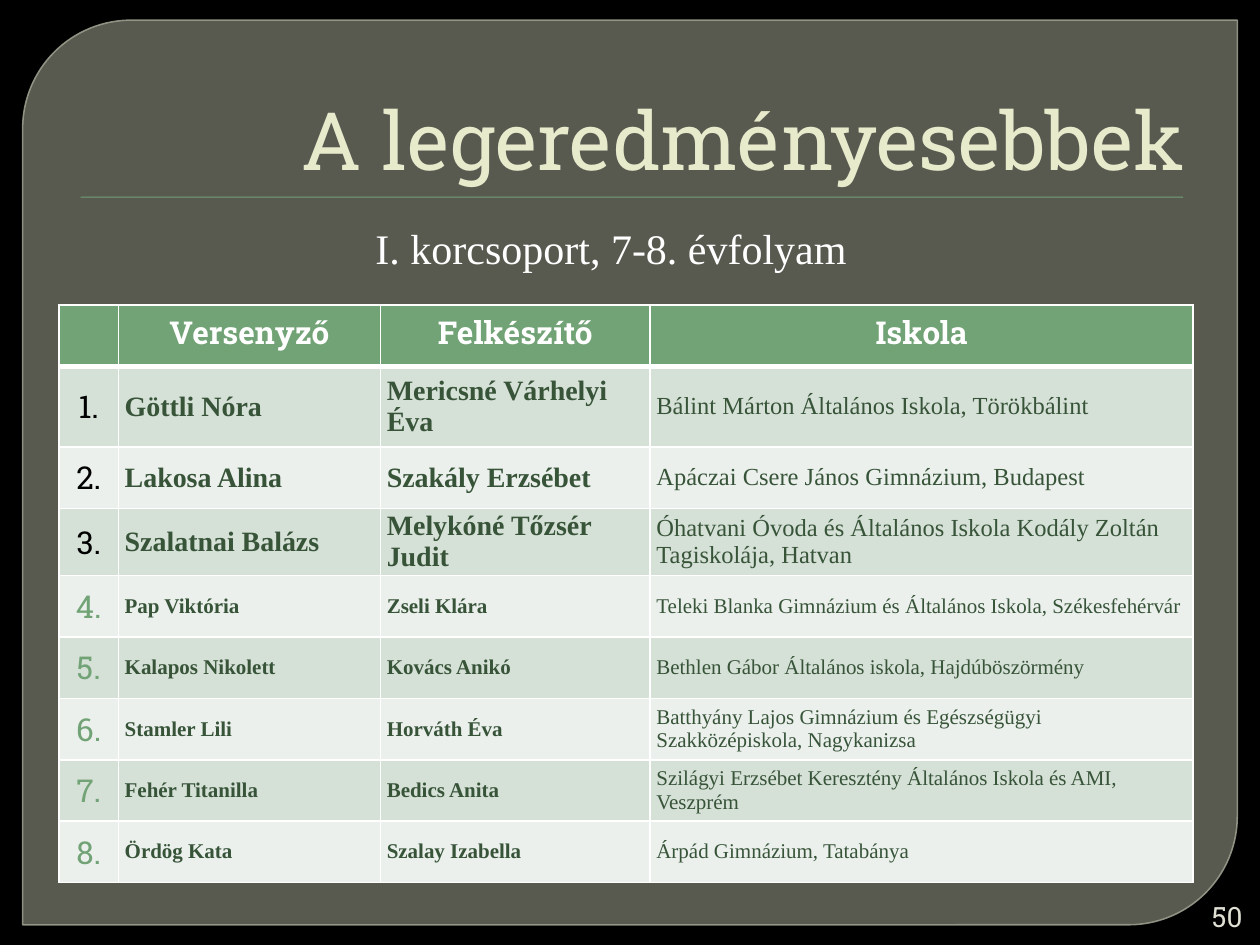
from dataclasses import dataclass

from lxml import etree
from pptx import Presentation, util as u
from pptx.dml import color
from pptx.enum import shapes, text
from pptx.oxml import ns

WIDTH, HEIGHT = u.Inches(10), u.Inches(7.5)
COLORS = {
    "background": "000000", "panel": "888B7B", "outline": "9DA090",
    "green": "72A376", "title": "E7EACB", "white": "FFFFFF", "black": "000000",
    "dark": "375439", "odd": "D5E0D6", "even": "EBF0EC", "number": "E0E0D4",
}
SLAB, SERIF = "Roboto Slab", "Times New Roman"
LEFT, CENTER, RIGHT = text.PP_ALIGN.LEFT, text.PP_ALIGN.CENTER, text.PP_ALIGN.RIGHT
MIDDLE = text.MSO_ANCHOR.MIDDLE
HEADINGS = ("", "Versenyző", "Felkészítő", "Iskola")
COLUMN_SHARES = (4.7, 20.8, 21.4, 43.1)
ROW_SHARE, FIRST_RESULT_SHARE = 6.5, 8.53
PODIUM = 3


@dataclass(frozen=True)
class Box:
    """Place on the slide in percent of its width and height."""
    left: float
    top: float
    width: float
    height: float

    def lengths(self) -> tuple:
        """Return left, top, width and height in slide units."""
        return (across(self.left), down(self.top), across(self.width), down(self.height))


@dataclass(frozen=True)
class Result:
    """One ranked competitor with teacher and school."""
    competitor: str
    teacher: str
    school: str


RESULTS = (
    Result("Göttli Nóra", "Mericsné Várhelyi Éva", "Bálint Márton Általános Iskola, Törökbálint"),
    Result("Lakosa Alina", "Szakály Erzsébet", "Apáczai Csere János Gimnázium, Budapest"),
    Result("Szalatnai Balázs", "Melykóné Tőzsér Judit",
           "Óhatvani Óvoda és Általános Iskola Kodály Zoltán Tagiskolája, Hatvan"),
    Result("Pap Viktória", "Zseli Klára",
           "Teleki Blanka Gimnázium és Általános Iskola, Székesfehérvár"),
    Result("Kalapos Nikolett", "Kovács Anikó", "Bethlen Gábor Általános iskola, Hajdúböszörmény"),
    Result("Stamler Lili", "Horváth Éva",
           "Batthyány Lajos Gimnázium és Egészségügyi Szakközépiskola, Nagykanizsa"),
    Result("Fehér Titanilla", "Bedics Anita",
           "Szilágyi Erzsébet Keresztény Általános Iskola és AMI, Veszprém"),
    Result("Ördög Kata", "Szalay Izabella", "Árpád Gimnázium, Tatabánya"),
)


def across(share: float) -> int:
    """Turn a percentage of the slide's width into a length."""
    return int(WIDTH * share / 100)


def down(share: float) -> int:
    """Turn a percentage of the slide's height into a length."""
    return int(HEIGHT * share / 100)


def rgb(name: str) -> color.RGBColor:
    """Look up a named colour."""
    return color.RGBColor.from_string(COLORS[name])


def write(frame, words: str, *, size: float, font: str, ink: str,
          align=LEFT, bold: bool = False) -> None:
    """Write one formatted paragraph into a text frame."""
    paragraph = frame.paragraphs[0]
    paragraph.alignment = align
    run = paragraph.add_run()
    run.text = words
    run.font.size, run.font.name, run.font.bold = u.Pt(size), font, bold
    run.font.color.rgb = rgb(ink)


def add_text(slide, box: Box, words: str, *, anchor=text.MSO_ANCHOR.TOP, **style) -> None:
    """Add a wrapping text box."""
    frame = slide.shapes.add_textbox(*box.lengths()).text_frame
    frame.word_wrap, frame.vertical_anchor = True, anchor
    write(frame, words, **style)


def add_block(slide, kind, box: Box, fill: str):
    """Add a filled preset shape without outline or shadow."""
    shape = slide.shapes.add_shape(kind, *box.lengths())
    shape.shadow.inherit = False
    shape.fill.solid()
    shape.fill.fore_color.rgb = rgb(fill)
    shape.line.fill.background()
    return shape


def set_opacity(element, percent: int) -> None:
    """Make the first colour found inside an element translucent."""
    tint = next(element.iter(ns.qn("a:srgbClr")))
    etree.SubElement(tint, ns.qn("a:alpha"), val=str(percent * 1000))


def add_panel(slide) -> None:
    """Add the translucent panel with two rounded corners."""
    panel = add_block(slide, shapes.MSO_SHAPE.ROUND_2_DIAG_RECTANGLE,
                      Box(1.8, 2.13, 96.4, 95.73), "panel")
    panel.adjustments[0], panel.adjustments[1] = 0.12, 0
    set_opacity(panel.fill._xPr.find(ns.qn("a:solidFill")), 65)
    panel.line.color.rgb = rgb("outline")
    panel.line.width = u.Pt(0.87)
    set_opacity(panel.line._ln, 88)


def format_cell(cell, fill: str, top: float, bottom: float) -> None:
    """Give a cell white borders, a fill and middle anchoring."""
    properties = cell._tc.get_or_add_tcPr()
    for side, width in {"L": 1, "R": 1, "T": top, "B": bottom}.items():
        border = etree.SubElement(properties, ns.qn(f"a:ln{side}"), w=str(u.Pt(width)))
        paint = etree.SubElement(border, ns.qn("a:solidFill"))
        etree.SubElement(paint, ns.qn("a:srgbClr"), val=COLORS["white"])
    cell.fill.solid()
    cell.fill.fore_color.rgb = rgb(fill)


def fill_result(cells, rank: int, result: Result) -> None:
    """Fill one row of the ranking."""
    podium = rank <= PODIUM
    name_size, school_size = (16, 14) if podium else (12, 12)
    band = "odd" if rank % 2 else "even"
    for cell in cells:
        format_cell(cell, band, 3 if rank == 1 else 1, 1)
        cell.vertical_anchor = MIDDLE
    write(cells[0].text_frame, f"{rank}.", size=18, font=SLAB,
          ink="black" if podium else "green", align=CENTER)
    entries = ((result.competitor, name_size, True), (result.teacher, name_size, True),
               (result.school, school_size, False))
    for cell, (words, size, bold) in zip(cells[1:], entries):
        cell.margin_left = cell.margin_right = u.Inches(0.05)
        cell.margin_top = cell.margin_bottom = 0
        write(cell.text_frame, words, size=size, font=SERIF, ink="dark", bold=bold)


def add_ranking(slide) -> None:
    """Add the table of results."""
    heights = [ROW_SHARE, FIRST_RESULT_SHARE] + [ROW_SHARE] * (len(RESULTS) - 1)
    box = Box(4.7, 32.27, sum(COLUMN_SHARES), sum(heights))
    table = slide.shapes.add_table(len(heights), len(HEADINGS), *box.lengths()).table
    for column, share in zip(table.columns, COLUMN_SHARES):
        column.width = across(share)
    for row, share in zip(table.rows, heights):
        row.height = down(share)
    for cell, heading in zip(table.rows[0].cells, HEADINGS):
        format_cell(cell, "green", 1, 3)
        if heading:
            write(cell.text_frame, heading, size=18, font=SLAB, ink="white",
                  align=CENTER, bold=True)
    for rank, result in enumerate(RESULTS, 1):
        fill_result(list(table.rows[rank].cells), rank, result)


def main() -> None:
    """Build and save the slide."""
    presentation = Presentation()
    presentation.slide_width, presentation.slide_height = WIDTH, HEIGHT
    slide = presentation.slides.add_slide(presentation.slide_layouts[6])
    slide.background.fill.solid()
    slide.background.fill.fore_color.rgb = rgb("background")
    add_panel(slide)
    add_block(slide, shapes.MSO_SHAPE.RECTANGLE, Box(6.4, 20.8, 87.5, 0.13), "green")
    add_text(slide, Box(5, 3.73, 90, 16.67), "A legeredményesebbek", size=46, font=SLAB,
             ink="title", align=RIGHT, anchor=text.MSO_ANCHOR.BOTTOM)
    add_ranking(slide)
    add_text(slide, Box(10.2, 22.93, 76.6, 6.8), "I. korcsoport, 7-8. évfolyam", size=24,
             font=SERIF, ink="white", align=CENTER)
    add_text(slide, Box(94.5, 94.93, 5.1, 4), "50", size=16, font=SLAB, ink="number",
             align=RIGHT, anchor=MIDDLE)
    presentation.save("out.pptx")


if __name__ == "__main__":
    main()
